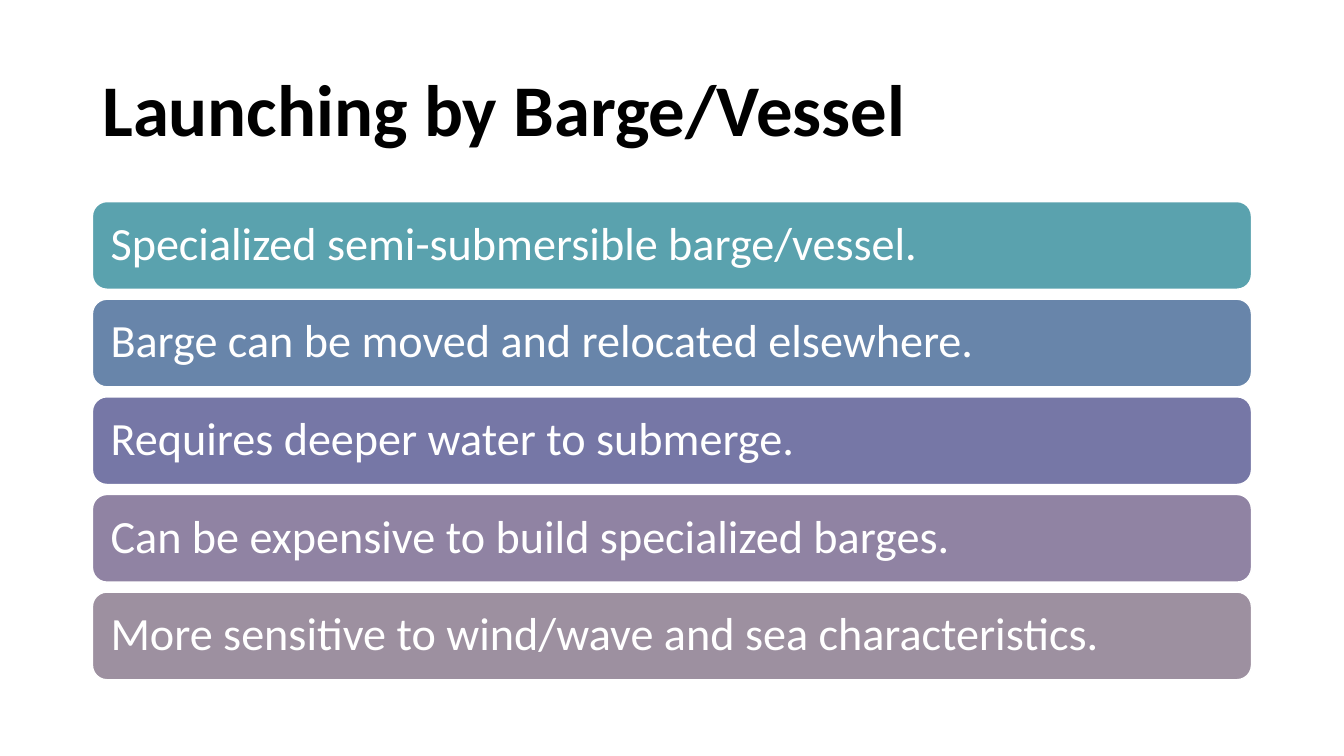
from pptx import Presentation
from pptx.dml.color import RGBColor
from pptx.enum import shapes, text
from pptx.util import Cm, Pt

LEFT = Cm(2.33)
WIDTH = Cm(29.21)
BAR_TOP = 5.08
BAR_HEIGHT = 2.21
BAR_STEP = 2.46
BARS = [
    ("Specialized semi-submersible barge/vessel.", "5AA2AE"),
    ("Barge can be moved and relocated elsewhere.", "6885AA"),
    ("Requires deeper water to submerge.", "7677A6"),
    ("Can be expensive to build specialized barges.", "9083A3"),
    ("More sensitive to wind/wave and sea characteristics.", "9D90A0"),
]


def color(value):
    return RGBColor.from_string(value)


def write(box, words, size, ink, bold=False):
    frame = box.text_frame
    frame.text = words
    frame.word_wrap = True
    frame.vertical_anchor = text.MSO_ANCHOR.MIDDLE
    para = frame.paragraphs[0]
    para.alignment = text.PP_ALIGN.LEFT
    para.line_spacing = 0.9
    for span in para.runs:
        span.font.name = "Calibri"
        span.font.size = Pt(size)
        span.font.bold = bold
        span.font.color.rgb = color(ink)
    return frame


def add_title(page, words):
    box = page.shapes.add_textbox(LEFT, Cm(1.01), WIDTH, Cm(3.68))
    write(box, words, 52, "000000", bold=True)


def add_bar(page, top, words, fill):
    bar = page.shapes.add_shape(
        shapes.MSO_SHAPE.ROUNDED_RECTANGLE, LEFT, Cm(top), WIDTH, Cm(BAR_HEIGHT)
    )
    bar.shadow.inherit = False
    bar.fill.solid()
    bar.fill.fore_color.rgb = color(fill)
    bar.line.color.rgb = color("FFFFFF")
    bar.line.width = Pt(1)
    frame = write(bar, words, 33, "FFFFFF")
    frame.margin_left = frame.margin_right = Cm(0.35)
    frame.margin_top = frame.margin_bottom = Cm(0.35)


def main():
    deck = Presentation()
    deck.slide_width = Cm(33.87)
    deck.slide_height = Cm(19.05)
    page = deck.slides.add_slide(deck.slide_layouts[6])
    add_title(page, "Launching by Barge/Vessel")
    for row, (words, fill) in enumerate(BARS):
        add_bar(page, BAR_TOP + row * BAR_STEP, words, fill)
    deck.save("out.pptx")


if __name__ == "__main__":
    main()
